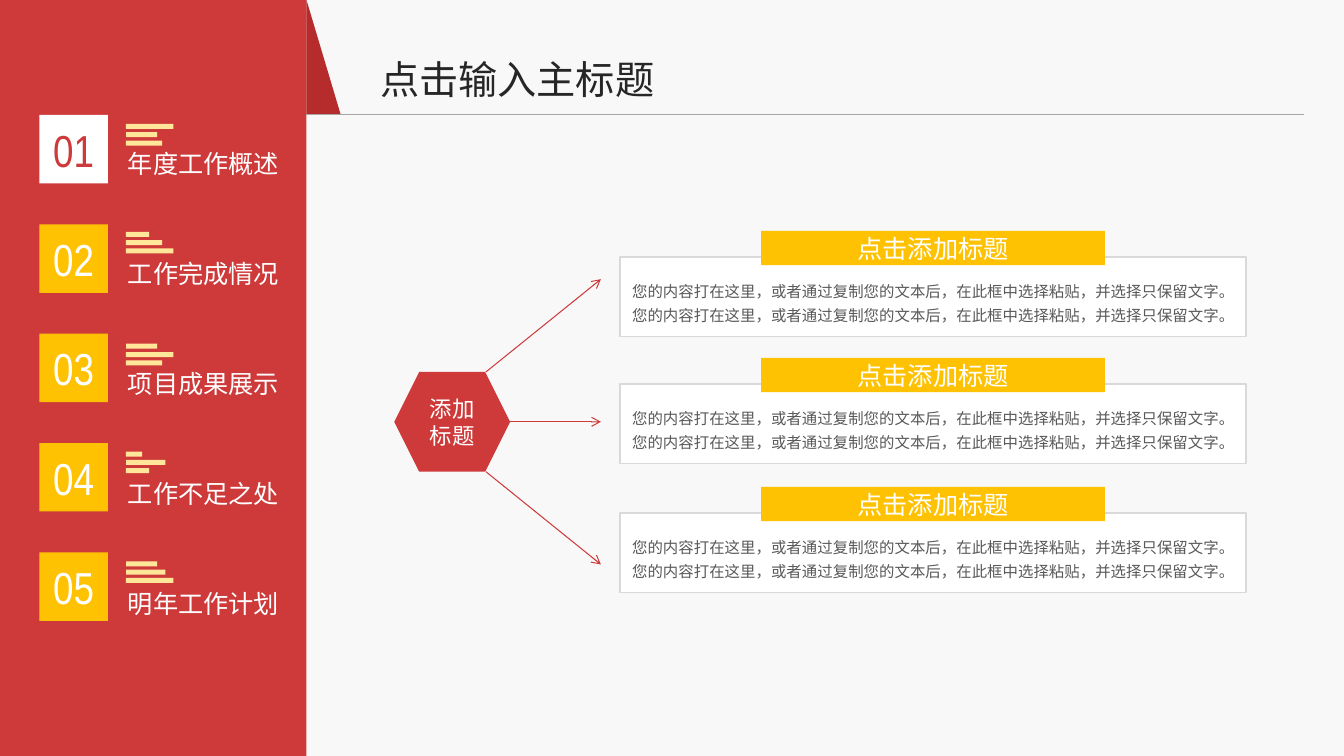
import pptx
import pptx.dml.color
import pptx.enum.shapes
import pptx.enum.text
import pptx.oxml
import pptx.oxml.ns
import pptx.util
import lxml.etree

SANS = "Noto Sans CJK SC"
RED, YELLOW, WHITE = "CE3A3A", "FEC202", "FFFFFF"
KINDS = pptx.enum.shapes.MSO_SHAPE
LEFT = pptx.enum.text.PP_ALIGN.LEFT
CENTER = pptx.enum.text.PP_ALIGN.CENTER
MIDDLE = pptx.enum.text.MSO_ANCHOR.MIDDLE
TOP = pptx.enum.text.MSO_ANCHOR.TOP
colour = pptx.dml.color.RGBColor.from_string

deck = pptx.Presentation()
deck.slide_width = pptx.util.Inches(13.33)
deck.slide_height = pptx.util.Inches(7.5)
cell = deck.slide_height // 750

page = deck.slides.add_slide(deck.slide_layouts[5])
page.background.fill.solid()
page.background.fill.fore_color.rgb = colour("F8F8F8")


def draw(kind, place, fill, line=None):
    shape = page.shapes.add_shape(kind, *[round(n * cell) for n in place])
    shape.shadow.inherit = False
    shape.fill.solid()
    shape.fill.fore_color.rgb = colour(fill)
    if line:
        shape.line.color.rgb = colour(line)
        shape.line.width = pptx.util.Pt(1)
    else:
        shape.line.fill.background()
    return shape


def write(box, text, size, ink, align=LEFT, anchor=TOP, font=SANS, wrap=True, inset=8):
    frame = box.text_frame
    frame.word_wrap = wrap
    frame.vertical_anchor = anchor
    frame.margin_left = frame.margin_right = inset * cell
    frame.margin_top = frame.margin_bottom = inset * cell // 2
    para = frame.paragraphs[0]
    para.alignment = align
    span = para.add_run()
    span.text = text
    span.font.size = pptx.util.Pt(size)
    span.font.name = font
    span.font.color.rgb = colour(ink)
    east = lxml.etree.SubElement(span.font._element, pptx.oxml.ns.qn("a:ea"))
    east.set("typeface", font)
    return para


title = page.shapes.title
title.left, title.top, title.width, title.height = [n * cell for n in (367, 50, 295, 57)]
title.text_frame.auto_size = pptx.enum.text.MSO_AUTO_SIZE.NONE
write(title, "点击输入主标题", 28, "262626", wrap=False, inset=10)

draw(KINDS.RECTANGLE, (0, 0, 304, 750), RED)
draw(KINDS.RIGHT_TRIANGLE, (304, 0, 34, 114), "B62C2C")

chapters = [
    ("年度工作概述", 123, (47, 31, 36)),
    ("工作完成情况", 230, (23, 36, 47)),
    ("项目成果展示", 341, (31, 47, 36)),
    ("工作不足之处", 448, (16, 39, 23)),
    ("明年工作计划", 557, (31, 39, 47)),
]
for row, (name, bars_top, bars) in enumerate(chapters):
    tile_fill, tile_ink = (YELLOW, WHITE) if row else (WHITE, RED)
    tile = draw(KINDS.RECTANGLE, (39, 114 + 108.5 * row, 68, 68), tile_fill)
    write(tile, f"{row + 1:02}", 32, tile_ink, CENTER, MIDDLE, "Arial Narrow", inset=10)
    for step, width in enumerate(bars):
        draw(KINDS.RECTANGLE, (125, bars_top + 8.2 * step, width, 5), "FFE699")
    label_top = round((142 + 109.25 * row) * cell)
    label = page.shapes.add_textbox(117 * cell, label_top, 172 * cell, 40 * cell)
    write(label, name, 18, WHITE, wrap=False, inset=10)

hub = draw(KINDS.HEXAGON, (391, 369, 115, 99), RED)
write(hub, "添加标题", 16, WHITE, CENTER, MIDDLE)

lines = [
    ((304, 114, 1293, 114), "A6A6A6", False),
    ((482, 369, 596, 277), RED, True),
    ((506, 418.5, 596, 418.5), RED, True),
    ((482, 468, 596, 560), RED, True),
]
for ends, ink, arrow in lines:
    connector = page.shapes.add_connector(
        pptx.enum.shapes.MSO_CONNECTOR.STRAIGHT, *[round(n * cell) for n in ends])
    connector.line.color.rgb = colour(ink)
    connector.line.width = pptx.util.Pt(0.75)
    if arrow:
        head = lxml.etree.SubElement(connector.line._get_or_add_ln(), pptx.oxml.ns.qn("a:tailEnd"))
        head.set("type", "arrow")
    lxml.etree.SubElement(connector._element.spPr, pptx.oxml.ns.qn("a:effectLst"))

sentence = "您的内容打在这里，或者通过复制您的文本后，在此框中选择粘贴，并选择只保留文字。"
for card_top in (255, 381, 509):
    draw(KINDS.RECTANGLE, (615, card_top, 621, 79), WHITE, "D9D9D9")
    banner = draw(KINDS.RECTANGLE, (755, card_top - 26, 341, 34), YELLOW)
    write(banner, "点击添加标题", 18, WHITE, CENTER, MIDDLE)
    detail = page.shapes.add_textbox(619 * cell, (card_top + 15) * cell, 617 * cell, 54 * cell)
    write(detail, sentence * 2, 11, "595959").line_spacing = 1.3

deck.save("out.pptx")
